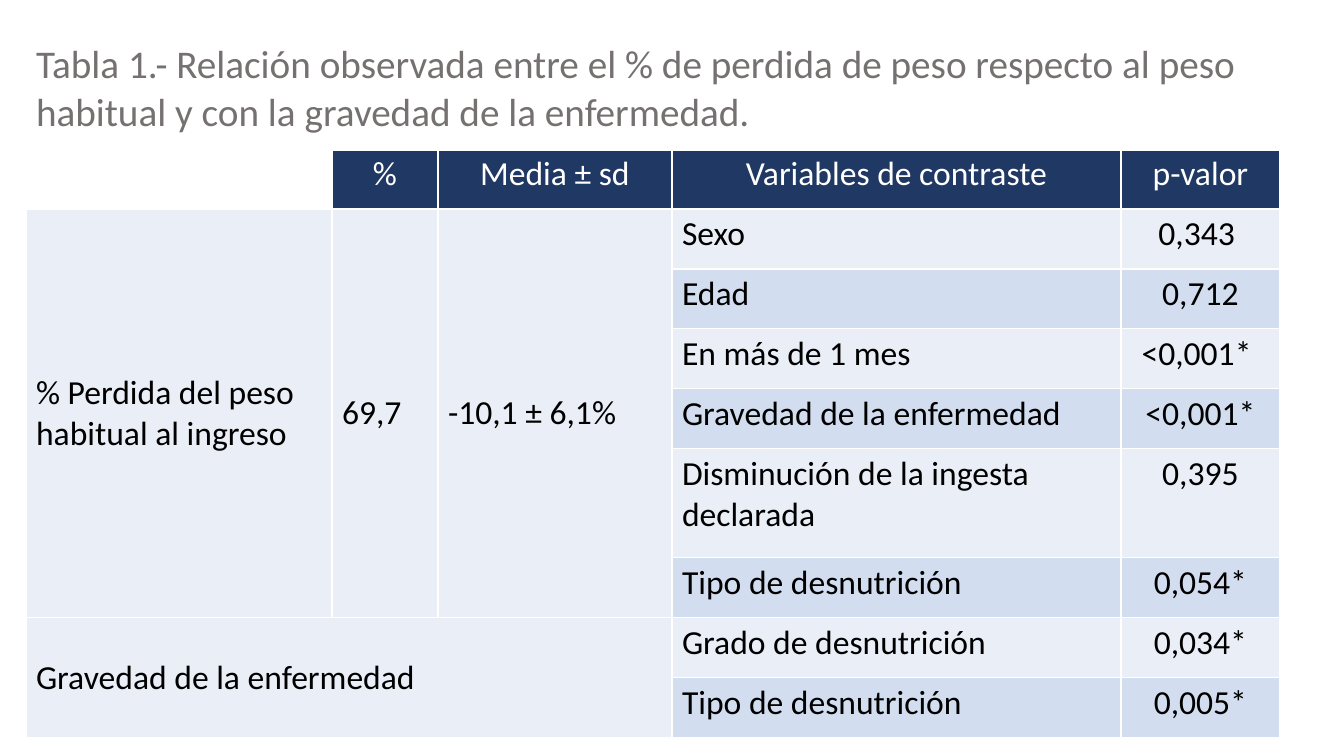
"""Build the slide with the table of weight loss against disease severity."""
from dataclasses import dataclass

from lxml import etree
from pptx import Presentation, util as u
from pptx.dml.color import RGBColor
from pptx.enum import text
from pptx.oxml.ns import qn

TITLE = ("Tabla 1.- Relación observada entre el % de perdida de peso "
         "respecto al peso habitual y con la gravedad de la enfermedad.")
HEADERS = ["", "%", "Media ± sd", "Variables de contraste", "p-valor"]
CONTRASTS = [
    ("Sexo", "0,343 "),
    ("Edad", "0,712"),
    ("En más de 1 mes", "<0,001* "),
    ("Gravedad de la enfermedad", "<0,001*"),
    ("Disminución de la ingesta declarada", "0,395"),
    ("Tipo de desnutrición", "0,054*"),
    ("Grado de desnutrición", "0,034*"),
    ("Tipo de desnutrición", "0,005*"),
]
GROUPS = [
    (2, 0, 7, 0, "% Perdida del peso habitual al ingreso"),
    (2, 1, 7, 1, "69,7"),
    (2, 2, 7, 2, "-10,1 ± 6,1%"),
    (8, 0, 9, 2, "Gravedad de la enfermedad"),
]
SLIDE_SIZE = (1344, 756)
TABLE_ORIGIN = (26, 36)
COLUMN_WIDTHS = [306, 106, 234, 449, 159]
TITLE_HEIGHT, ROW_HEIGHT, TALL_HEIGHT = 113, 60, 109
TALL_ROW = 6


@dataclass(frozen=True)
class Theme:
    font: str = "Calibri"
    title_size: int = 28
    body_size: int = 24
    white: str = "FFFFFF"
    title: str = "767171"
    header: str = "203864"
    black: str = "000000"
    bands: tuple = ("EAEFF7", "D2DEEF")


THEME = Theme()


def px(length):
    return u.Emu(round(length * 914400 / 100.8))


def draw_borders(cell, bottom=1):
    properties = cell._tc.get_or_add_tcPr()
    for side, points in (("L", 1), ("R", 1), ("T", 1), ("B", bottom)):
        line = etree.SubElement(properties, qn(f"a:ln{side}"), w=str(u.Pt(points)))
        fill = etree.SubElement(line, qn("a:solidFill"))
        etree.SubElement(fill, qn("a:srgbClr"), val=THEME.white)


def paint(cell, color):
    cell.fill.solid()
    cell.fill.fore_color.rgb = RGBColor.from_string(color)


def write(cell, words, color, size=THEME.body_size, centred=False, middle=False):
    cell.text = words
    paragraph = cell.text_frame.paragraphs[0]
    paragraph.font.name = THEME.font
    paragraph.font.size = u.Pt(size)
    paragraph.font.color.rgb = RGBColor.from_string(color)
    if centred:
        paragraph.alignment = text.PP_ALIGN.CENTER
    if middle:
        cell.vertical_anchor = text.MSO_ANCHOR.MIDDLE


def add_results_table(slide):
    heights = [TITLE_HEIGHT] + [ROW_HEIGHT] * (len(CONTRASTS) + 1)
    heights[TALL_ROW] = TALL_HEIGHT
    box = (*TABLE_ORIGIN, sum(COLUMN_WIDTHS), sum(heights))
    table = slide.shapes.add_table(len(heights), len(COLUMN_WIDTHS), *map(px, box)).table
    table.first_row = table.horz_banding = False
    for column, width in zip(table.columns, COLUMN_WIDTHS):
        column.width = px(width)
    for index, (row, height) in enumerate(zip(table.rows, heights)):
        row.height = px(height)
        for cell in row.cells:
            draw_borders(cell, bottom=3 if index == 0 else 1)
            paint(cell, THEME.bands[0] if index > 1 else THEME.white)

    table.cell(0, 0).merge(table.cell(0, len(COLUMN_WIDTHS) - 1))
    write(table.cell(0, 0), TITLE, THEME.title, THEME.title_size)
    for column, header in enumerate(HEADERS):
        if header:
            paint(table.cell(1, column), THEME.header)
            write(table.cell(1, column), header, THEME.white, centred=True)
    for top, left, bottom, right, label in GROUPS:
        if (top, left) != (bottom, right):
            table.cell(top, left).merge(table.cell(bottom, right))
        write(table.cell(top, left), label, THEME.black, middle=True)
    for index, contrast in enumerate(CONTRASTS):
        for column, words in enumerate(contrast, start=3):
            cell = table.cell(index + 2, column)
            paint(cell, THEME.bands[index % 2])
            write(cell, words, THEME.black, centred=column == 4)


def main():
    presentation = Presentation()
    presentation.slide_width, presentation.slide_height = map(px, SLIDE_SIZE)
    slide = presentation.slides.add_slide(presentation.slide_layouts[6])
    add_results_table(slide)
    presentation.save("out.pptx")


if __name__ == "__main__":
    main()
